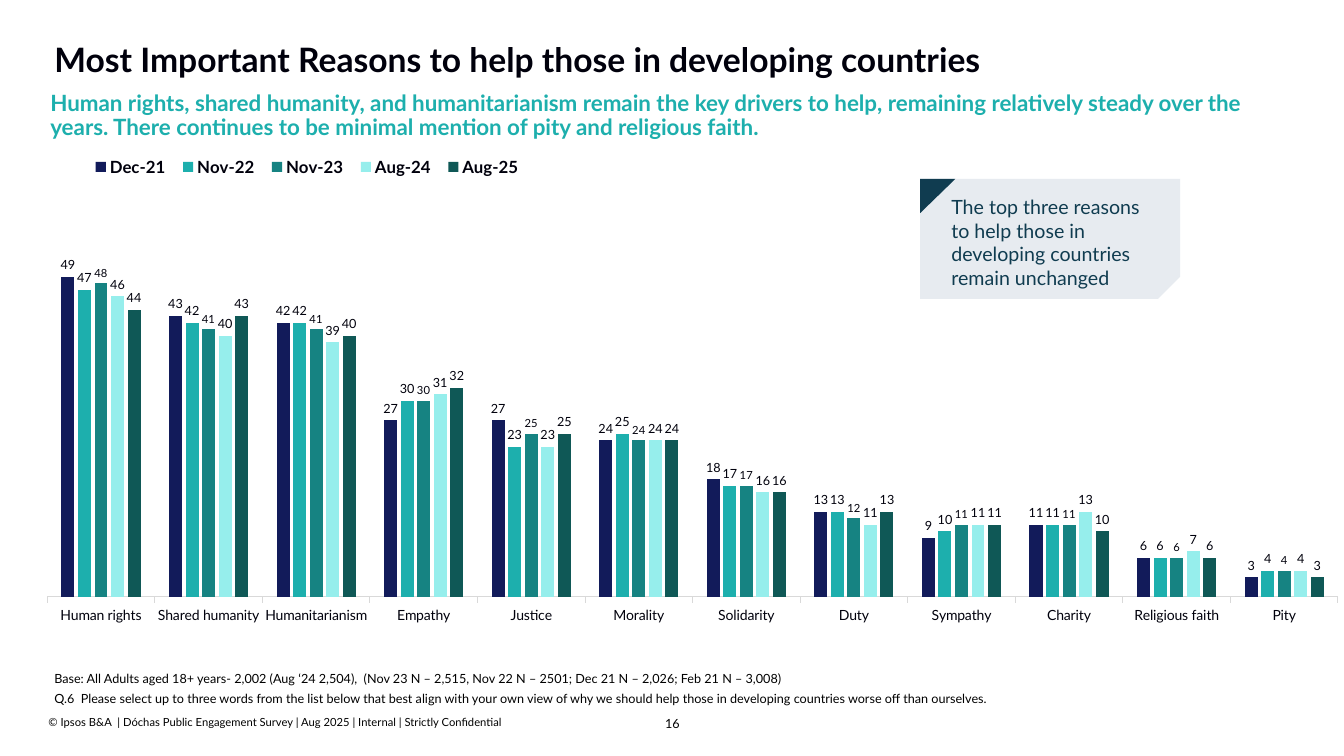
from pptx import Presentation
from pptx.chart.data import CategoryChartData
from pptx.dml.color import RGBColor
from pptx.enum.chart import XL_CHART_TYPE, XL_LABEL_POSITION, XL_LEGEND_POSITION
from pptx.enum.chart import XL_TICK_LABEL_POSITION, XL_TICK_MARK
from pptx.enum.shapes import MSO_SHAPE
from pptx.enum.text import MSO_ANCHOR, MSO_AUTO_SIZE, PP_ALIGN
from pptx.oxml import parse_xml
from pptx.oxml.ns import nsdecls
from pptx.util import Inches, Pt

FONT = "Lato"
BLACK = RGBColor(0x00, 0x00, 0x00)
INK = RGBColor(0x00, 0x00, 0x0C)
TEAL = RGBColor(0x1D, 0xAF, 0xAD)
PETROL = RGBColor(0x10, 0x3C, 0x50)
PALE_GREY = RGBColor(0xE7, 0xEB, 0xF0)
AXIS_GREY = RGBColor(0xD9, 0xD9, 0xD9)

REASONS = ["Human rights", "Shared humanity", "Humanitarianism", "Empathy",
           "Justice", "Morality", "Solidarity", "Duty", "Sympathy", "Charity",
           "Religious faith", "Pity"]
# wave, shares in %, bar colour, label size
WAVES = [
    ("Dec-21", [49, 43, 42, 27, 27, 24, 18, 13, 9, 11, 6, 3], RGBColor(0x12, 0x1B, 0x5A), 9),
    ("Nov-22", [47, 42, 42, 30, 23, 25, 17, 13, 10, 11, 6, 4], TEAL, 9),
    ("Nov-23", [48, 41, 41, 30, 25, 24, 17, 12, 11, 11, 6, 4], RGBColor(0x16, 0x83, 0x82), 8),
    ("Aug-24", [46, 40, 39, 31, 23, 24, 16, 11, 11, 13, 7, 4], RGBColor(0x96, 0xEE, 0xEC), 9),
    ("Aug-25", [44, 43, 40, 32, 25, 24, 16, 13, 11, 10, 6, 3], RGBColor(0x0F, 0x58, 0x56), 9),
]


def style(font, size, color, bold=False):
    font.name, font.size, font.bold = FONT, Pt(size), bold
    font.color.rgb = color


def set_layout(element, index, x, y, w, h, target=""):
    """Place a chart part by fractions of the chart area."""
    for old in element.findall("{*}layout"):
        element.remove(old)
    element.insert(index, parse_xml(
        f'<c:layout {nsdecls("c")}><c:manualLayout>{target}'
        '<c:xMode val="edge"/><c:yMode val="edge"/>'
        f'<c:x val="{x}"/><c:y val="{y}"/><c:w val="{w}"/><c:h val="{h}"/>'
        '</c:manualLayout></c:layout>'))


prs = Presentation()
prs.slide_width, prs.slide_height = Inches(13.33), Inches(7.5)
slide = prs.slides.add_slide(prs.slide_layouts[5])

# Title
title = slide.shapes.title
title.left, title.top = Inches(0.44), Inches(0.38)
title.width, title.height = Inches(12.34), Inches(0.78)
title.text_frame.auto_size = MSO_AUTO_SIZE.NONE
title.text_frame.vertical_anchor = MSO_ANCHOR.TOP
headline = title.text_frame.paragraphs[0]
headline.alignment, headline.line_spacing = PP_ALIGN.LEFT, 0.9
run = headline.add_run()
run.text = "Most Important Reasons to help those in developing countries"
style(run.font, 24, INK, True)

# Chart
chart_data = CategoryChartData()
chart_data.categories = REASONS
for wave, shares, _, _ in WAVES:
    chart_data.add_series(wave, shares)
chart = slide.shapes.add_chart(
    XL_CHART_TYPE.COLUMN_CLUSTERED, Inches(0.16), Inches(1.41),
    Inches(13.42), Inches(4.92), chart_data).chart
chart.has_title = False
style(chart.font, 12, INK)

plot = chart.plots[0]
plot.gap_width, plot.overlap, plot.vary_by_categories = 219, -27, False
for series, (_, _, color, label_size) in zip(plot.series, WAVES):
    series.format.fill.solid()
    series.format.fill.fore_color.rgb = color
    labels = series.data_labels
    labels.show_value = True
    labels.position = XL_LABEL_POSITION.OUTSIDE_END
    style(labels.font, label_size, INK)

reason_axis = chart.category_axis
reason_axis.major_tick_mark = XL_TICK_MARK.OUTSIDE
reason_axis.tick_label_position = XL_TICK_LABEL_POSITION.LOW
reason_axis.format.line.color.rgb = AXIS_GREY
reason_axis.format.line.width = Pt(0.75)
style(reason_axis.tick_labels.font, 10, INK)
share_axis = chart.value_axis
share_axis.minimum_scale, share_axis.maximum_scale = 0, 60
share_axis.has_major_gridlines = False
share_axis.visible = False

chart.has_legend = True
chart.legend.position = XL_LEGEND_POSITION.BOTTOM
chart.legend.include_in_layout = False
style(chart.legend.font, 12, INK, True)
set_layout(chart.legend._element, 1, 0.05, 0.02, 0.33, 0.06)
set_layout(plot._element.getparent(), 0, 0.023, 0.127, 0.954, 0.79,
           '<c:layoutTarget val="inner"/>')

# Callout: both shapes are turned a quarter, the text is turned back
callout = slide.shapes.add_shape(MSO_SHAPE.SNIP_1_RECTANGLE, Inches(9.82),
                                 Inches(1.08), Inches(1.19), Inches(2.58))
callout.adjustments[0] = 0.185
corner = slide.shapes.add_shape(MSO_SHAPE.RIGHT_TRIANGLE, Inches(9.13),
                                Inches(1.77), Inches(0.34), Inches(0.35))
for shape, color in ((callout, PALE_GREY), (corner, PETROL)):
    shape.rotation = 90
    shape.shadow.inherit = False
    shape.fill.solid()
    shape.fill.fore_color.rgb = color
    shape.line.fill.background()
frame = callout.text_frame
frame.word_wrap = True
frame.vertical_anchor = MSO_ANCHOR.TOP
frame.margin_left, frame.margin_top = Inches(0.16), Inches(0.08)
frame.margin_right, frame.margin_bottom = Inches(0.08), Inches(0.31)
frame._txBody.bodyPr.set("vert", "vert270")
frame.paragraphs[0].alignment = PP_ALIGN.LEFT
run = frame.paragraphs[0].add_run()
run.text = "The top three reasons to help those in developing countries remain unchanged"
style(run.font, 14, PETROL)

# Subtitle, footer and page number: box, size, colour, bold, alignment, spacing, text
LINES = [
    ((0.5, 0.91, 11.93, 0.55), 16, TEAL, True, PP_ALIGN.LEFT, 0.9,
     "Human rights, shared humanity, and humanitarianism remain the key drivers to help, "
     "remaining relatively steady over the years. There continues to be minimal mention "
     "of pity and religious faith."),
    ((0.48, 7.1, 6.1, 0.13), 8, BLACK, False, PP_ALIGN.LEFT, 1.0,
     "© Ipsos B&A  | Dóchas Public Engagement Survey | Aug 2025 | Internal | Strictly Confidential"),
    ((6.4, 7.09, 0.54, 0.15), 9, BLACK, False, PP_ALIGN.CENTER, 1.1, "16"),
]
for box, size, color, bold, alignment, spacing, text in LINES:
    frame = slide.shapes.add_textbox(*map(Inches, box)).text_frame
    frame.word_wrap = True
    frame.margin_left = frame.margin_top = frame.margin_right = frame.margin_bottom = 0
    paragraph = frame.paragraphs[0]
    paragraph.alignment, paragraph.line_spacing = alignment, spacing
    run = paragraph.add_run()
    run.text = text
    style(run.font, size, color, bold)

# Base and question
NOTES = [
    "Base: All Adults aged 18+ years- 2,002 (Aug ‘24 2,504),  (Nov 23 N – 2,515, "
    "Nov 22 N – 2501; Dec 21 N – 2,026; Feb 21 N – 3,008)",
    "Q.6  Please select up to three words from the list below that best align with your "
    "own view of why we should help those in developing countries worse off than ourselves.",
]
frame = slide.shapes.add_textbox(Inches(0.44), Inches(6.58), Inches(10.74), Inches(0.38)).text_frame
frame.word_wrap = True
for number, note in enumerate(NOTES):
    paragraph = frame.add_paragraph() if number else frame.paragraphs[0]
    paragraph.line_spacing, paragraph.space_after = 1.15, Pt(2)
    properties = paragraph._p.get_or_add_pPr()
    properties.set("marL", str(Inches(0.39)))
    properties.set("indent", str(-Inches(0.39)))
    run = paragraph.add_run()
    run.text = note
    style(run.font, 9, BLACK)

prs.save("out.pptx")
